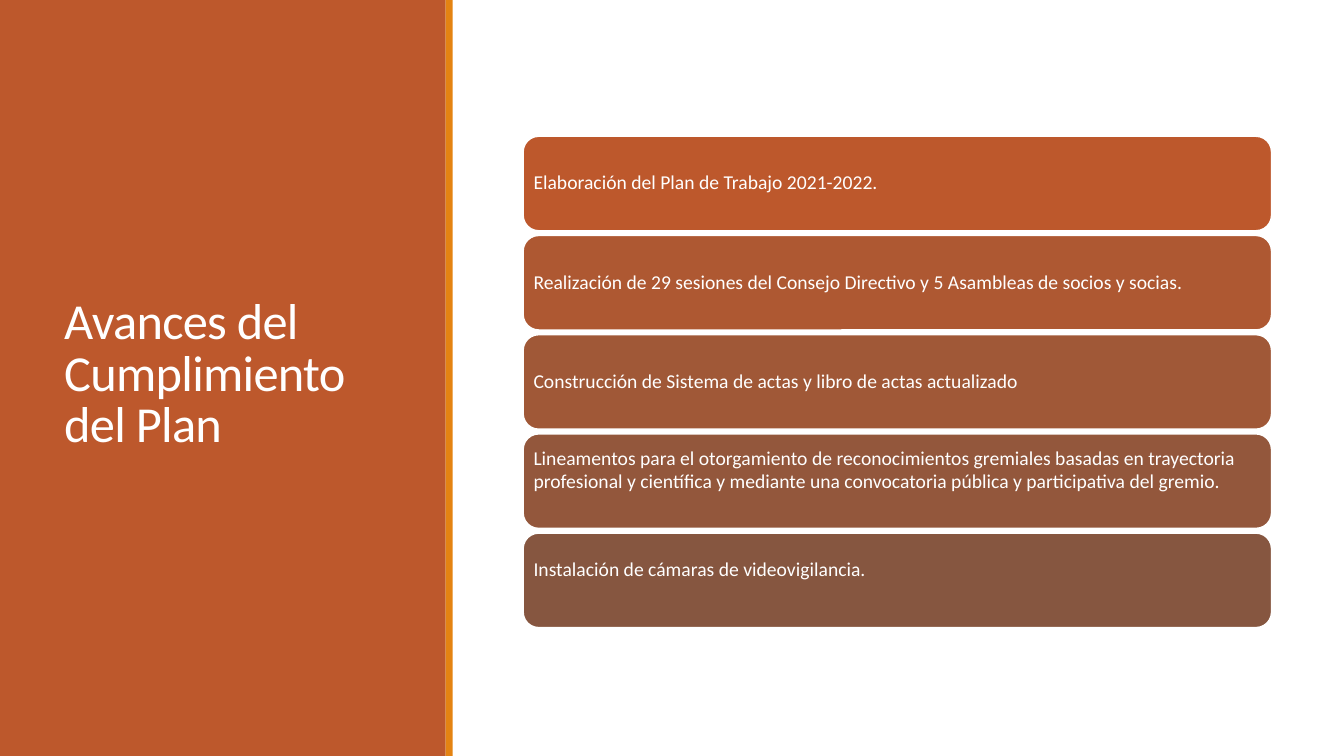
from pptx import Presentation
from pptx.dml.color import RGBColor
from pptx.enum.shapes import MSO_SHAPE as Shape
from pptx.enum.text import MSO_ANCHOR as Anchor, PP_ALIGN as Align
from pptx.util import Cm, Pt

TITLE = "Avances del Cumplimiento del Plan"
FONT = "Calibri"
WHITE, RUST, ORANGE = "FFFFFF", "BD582C", "E48312"

# Text, fill, line spacing, extra space under the text (cm)
ADVANCES = [
    ("Elaboración del Plan de Trabajo 2021-2022.", RUST, 0.9, 0),
    ("Realización de 29 sesiones del Consejo Directivo y 5 Asambleas de socios y socias.",
     "AE5832", 0.9, 0),
    ("Construcción de Sistema de actas y libro de actas actualizado", "A05837", 0.9, 0),
    ("Lineamentos para el otorgamiento de reconocimientos gremiales basadas en trayectoria "
     "profesional y científica y mediante una convocatoria pública y participativa del gremio.",
     "93573C", 1.0, 0.6),
    ("Instalación de cámaras de videovigilancia.", "865640", 1.0, 0.6),
]

PAGE_WIDTH, PAGE_HEIGHT = 33.87, 19.05
PANEL_WIDTH, STRIPE_WIDTH = 11.23, 0.18
BAR_LEFT, BAR_TOP, BAR_WIDTH, BAR_HEIGHT = 13.18, 3.43, 18.87, 2.39
BAR_PITCH = 2.5
BAR_INSET = 0.15


def color(value):
    return RGBColor.from_string(value)


def add_block(page, kind, left, top, width, height, fill):
    """Add a flat filled shape without outline; lengths in cm."""
    block = page.shapes.add_shape(kind, Cm(left), Cm(top), Cm(width), Cm(height))
    block.shadow.inherit = False
    block.fill.solid()
    block.fill.fore_color.rgb = color(fill)
    block.line.fill.background()
    return block


def write(box, text, size, line_spacing):
    """Put one white, left-aligned paragraph in the box and return its run."""
    frame = box.text_frame
    frame.word_wrap = True
    frame.vertical_anchor = Anchor.MIDDLE
    para = frame.paragraphs[0]
    para.alignment = Align.LEFT
    para.line_spacing = line_spacing
    para.font.name = FONT
    para.font.size = Pt(size)
    para.font.color.rgb = color(WHITE)
    span = para.add_run()
    span.text = text
    return span


def add_title_panel(page):
    add_block(page, Shape.RECTANGLE, 0, 0, PANEL_WIDTH, PAGE_HEIGHT, RUST)
    add_block(page, Shape.RECTANGLE, PANEL_WIDTH, 0, STRIPE_WIDTH, PAGE_HEIGHT, ORANGE)
    box = page.shapes.add_textbox(Cm(1.37), Cm(1.45), Cm(8.56), Cm(16.03))
    span = write(box, TITLE, 36, 0.85)
    span._r.get_or_add_rPr().set("spc", "-50")


def add_advances(page):
    for row, (text, fill, line_spacing, space_below) in enumerate(ADVANCES):
        bar = add_block(page, Shape.ROUNDED_RECTANGLE, BAR_LEFT, BAR_TOP + row * BAR_PITCH,
                        BAR_WIDTH, BAR_HEIGHT, fill)
        bar.line.color.rgb = color(WHITE)
        bar.line.width = Pt(1.25)
        write(bar, text, 14, line_spacing)
        frame = bar.text_frame
        frame.margin_left = frame.margin_right = frame.margin_top = Cm(BAR_INSET)
        frame.margin_bottom = Cm(BAR_INSET + space_below)


def main():
    deck = Presentation()
    deck.slide_width, deck.slide_height = Cm(PAGE_WIDTH), Cm(PAGE_HEIGHT)
    page = deck.slides.add_slide(deck.slide_layouts[6])
    add_title_panel(page)
    add_advances(page)
    deck.save("out.pptx")


if __name__ == "__main__":
    main()
